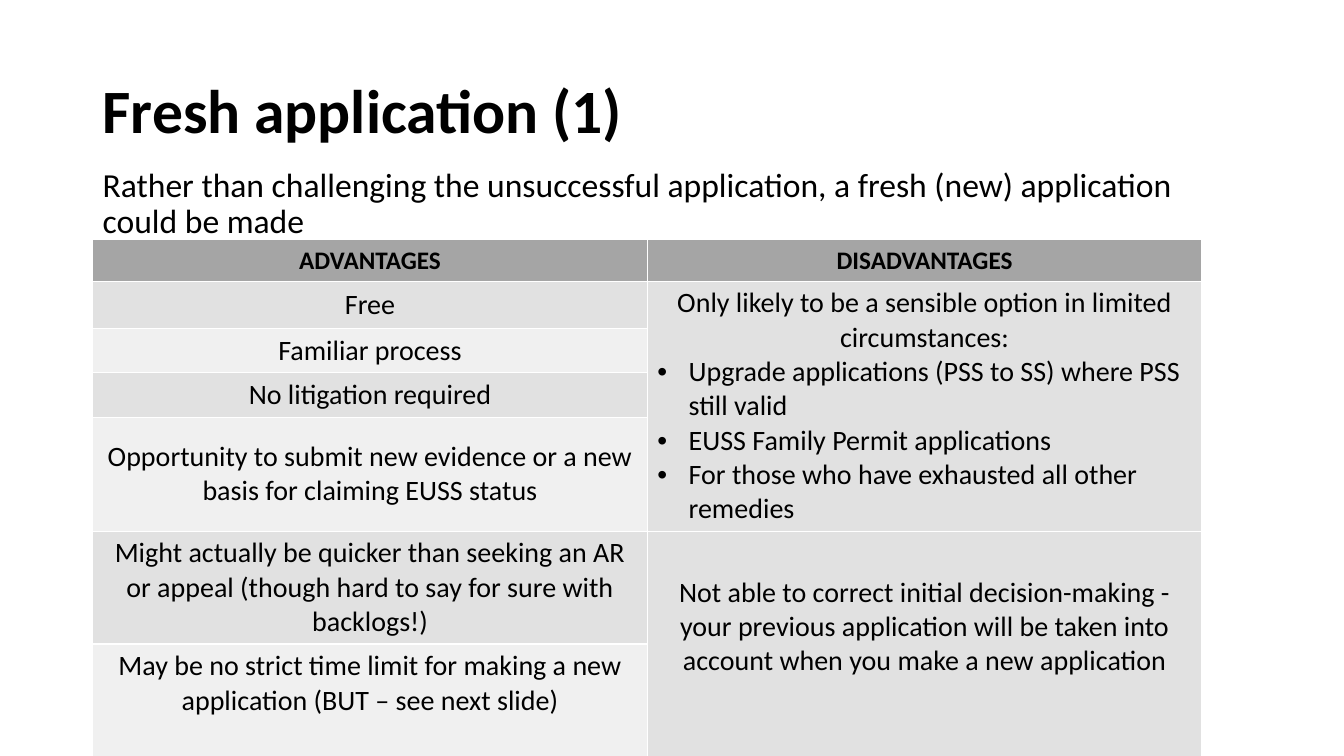
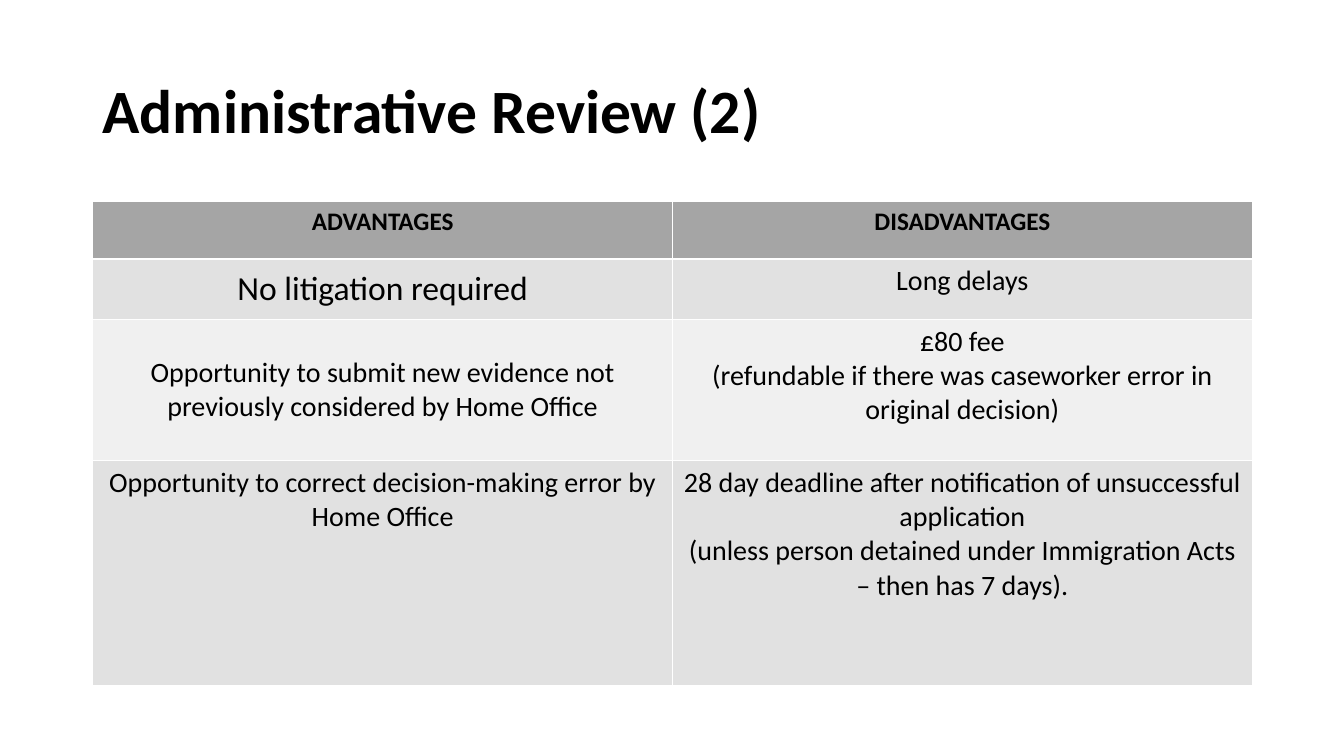
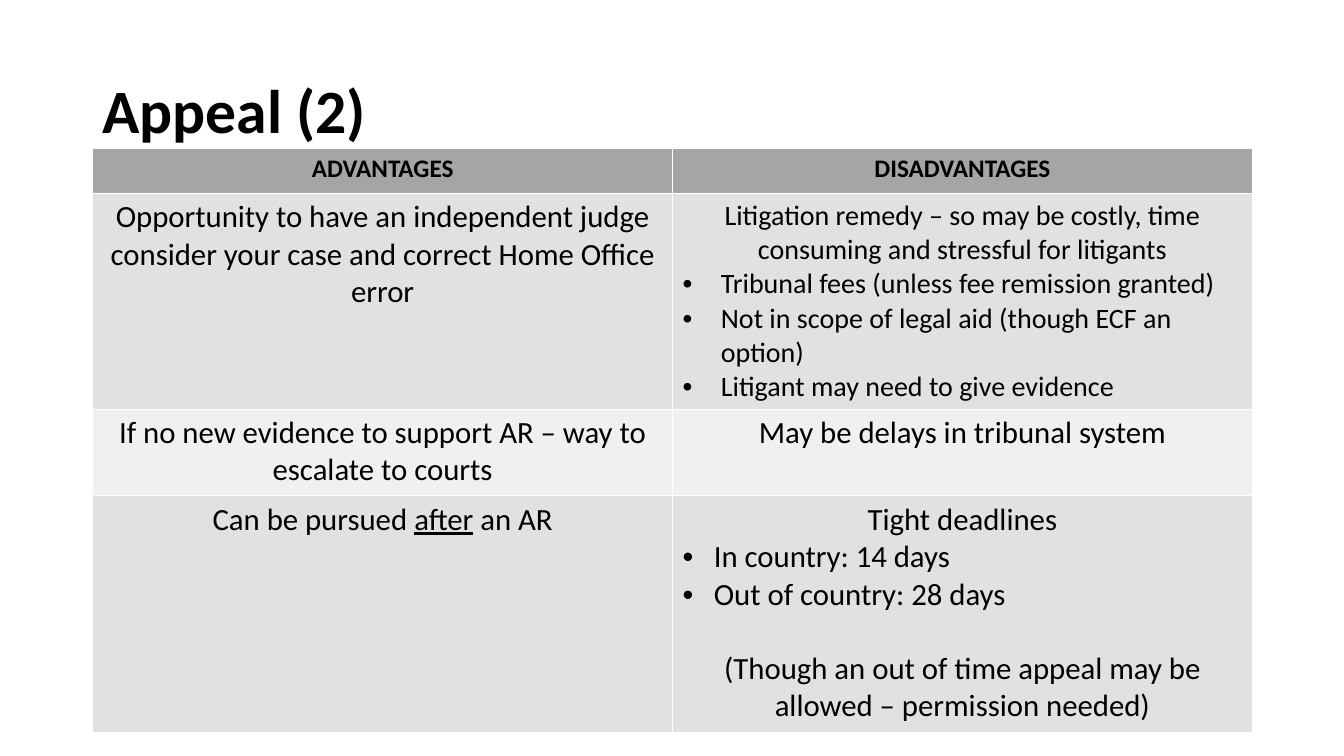
from dataclasses import dataclass
from lxml import etree
from pptx import Presentation
from pptx.dml.color import RGBColor
from pptx.enum import text
from pptx.oxml import ns
from pptx.util import Inches, Pt


@dataclass(frozen=True)
class Theme:
    font: str = "Calibri"
    ink: str = "000000"
    head: str = "A5A5A5"
    bands: tuple = ("F0F0F0", "E1E1E1")
    title: int = 44
    lead: int = 24
    label: int = 18
    wide: float = 13.33
    high: float = 7.5
    left: float = 0.92
    span: float = 11.5


@dataclass(frozen=True)
class Cell:
    text: str
    size: int = 20
    mid: bool = False
    rows: int = 1
    indent: float = 0.31
    foot: float = 0.05
    gap: float = 0


T = Theme()
HEADS = ("ADVANTAGES", "DISADVANTAGES")

SLIDES = [
    dict(
        title="Fresh application (1)",
        lead="Rather than challenging the unsuccessful application, a fresh (new) application could be made",
        top=2.38, width=11, mid=True,
        rows=(0.41, 0.47, 0.44, 0.44, 1.13, 1.12, 1.12),
        cols=(
            [
                Cell("Free", mid=True),
                Cell("Familiar process", mid=True),
                Cell("No litigation required", mid=True),
                Cell("Opportunity to submit new evidence or a new basis for claiming EUSS status", mid=True),
                Cell("Might actually be quicker than seeking an AR or appeal "
                     "(though hard to say for sure with backlogs!)", mid=True),
                Cell("May be no strict time limit for making a new application (BUT – see next slide)",
                     mid=True, foot=0.39),
            ],
            [
                Cell("Only likely to be a sensible option in limited circumstances:\n"
                     "•Upgrade applications (PSS to SS) where PSS still valid\n"
                     "•EUSS Family Permit applications\n"
                     "•For those who have exhausted all other remedies", mid=True, rows=4),
                Cell("Not able to correct initial decision-making - your previous application "
                     "will be taken into account when you make a new application",
                     mid=True, rows=2, foot=0.39),
            ],
        ),
    ),
    dict(
        title="Administrative Review (2)", top=2, width=T.span,
        rows=(0.57, 0.6, 1.4, 2.23),
        cols=(
            [
                Cell("No litigation required", 24, mid=True),
                Cell("Opportunity to submit new evidence not previously considered by Home Office", mid=True),
                Cell("Opportunity to correct decision-making error by Home Office"),
            ],
            [
                Cell("Long delays"),
                Cell("£80 fee\n(refundable if there was caseworker error in original decision)"),
                Cell("28 day deadline after notification of unsuccessful application\n"
                     "(unless person detained under Immigration Acts – then has 7 days)."),
            ],
        ),
    ),
    dict(
        title="Appeal (2)", top=1.47, width=T.span,
        rows=(0.45, 2.14, 0.86, 2.35),
        cols=(
            [
                Cell("Opportunity to have an independent judge consider your case and correct Home Office error", 22),
                Cell("If no new evidence to support AR – way to escalate to courts", 22),
                Cell("Can be pursued _after_ an AR", 22),
            ],
            [
                Cell("Litigation remedy – so may be costly, time consuming and stressful for litigants\n"
                     "•Tribunal fees (unless fee remission granted)\n"
                     "•Not in scope of legal aid (though ECF an option)\n"
                     "•Litigant may need to give evidence", indent=0.38),
                Cell("May be delays in tribunal system", 22),
                Cell("Tight deadlines\n•In country: 14 days\n•Out of country: 28 days\n"
                     "(Though an out of time appeal may be allowed – permission needed)", 22, gap=26.4),
            ],
        ),
    ),
]


def style(para, size, bold=False):
    font = para.font
    font.name, font.size, font.bold = T.font, Pt(size), bold
    font.color.rgb = RGBColor.from_string(T.ink)


def write(para, line):
    for i, part in enumerate(line.split("_")):
        run = para.add_run()
        run.text = part
        if i % 2:
            run.font.underline = True


def bullet(para, indent):
    props = para._p.get_or_add_pPr()
    props.set("marL", str(Inches(indent)))
    props.set("indent", str(-Inches(indent)))
    face = etree.SubElement(props, ns.qn("a:buFont"))
    face.set("typeface", "Arial")
    etree.SubElement(props, ns.qn("a:buChar")).set("char", "•")


def label(slide, words, top, high, size, bold=False, mid=False):
    box = slide.shapes.add_textbox(*map(Inches, (T.left, top, T.span, high)))
    frame = box.text_frame
    frame.word_wrap = True
    frame.vertical_anchor = text.MSO_ANCHOR.MIDDLE if mid else text.MSO_ANCHOR.TOP
    para = frame.paragraphs[0]
    para.line_spacing = 0.9
    write(para, words)
    style(para, size, bold)


def fill(box, cell, tone, bold=False):
    box.fill.solid()
    box.fill.fore_color.rgb = RGBColor.from_string(tone)
    box.vertical_anchor = text.MSO_ANCHOR.MIDDLE if cell.mid else text.MSO_ANCHOR.TOP
    box.margin_bottom = Inches(cell.foot)
    lines = cell.text.split("\n")
    for i, line in enumerate(lines):
        para = box.text_frame.add_paragraph() if i else box.text_frame.paragraphs[0]
        if line.startswith("•"):
            bullet(para, cell.indent)
        else:
            para.alignment = text.PP_ALIGN.CENTER
        if cell.gap and i == len(lines) - 1:
            para.space_before = Pt(cell.gap)
        write(para, line.lstrip("•"))
        style(para, cell.size, bold)


def grid(slide, page):
    rows = page["rows"]
    size = (T.left, page["top"], page["width"], sum(rows))
    table = slide.shapes.add_table(len(rows), len(HEADS), *map(Inches, size)).table
    for row, high in zip(table.rows, rows):
        row.height = Inches(high)
    for col, (head, cells) in enumerate(zip(HEADS, page["cols"])):
        table.columns[col].width = Inches(page["width"] / len(HEADS))
        fill(table.cell(0, col), Cell(head, T.label, page.get("mid", False)), T.head, True)
        row = 1
        for cell in cells:
            box = table.cell(row, col)
            if cell.rows > 1:
                box.merge(table.cell(row + cell.rows - 1, col))
            fill(box, cell, T.bands[row % 2])
            row += cell.rows


def main():
    deck = Presentation()
    deck.slide_width, deck.slide_height = Inches(T.wide), Inches(T.high)
    for page in SLIDES:
        slide = deck.slides.add_slide(deck.slide_layouts[6])
        label(slide, page["title"], 0.4, 1.45, T.title, bold=True, mid=True)
        if "lead" in page:
            label(slide, page["lead"], 1.62, 5.13, T.lead)
        grid(slide, page)
    deck.save("out.pptx")


if __name__ == "__main__":
    main()
